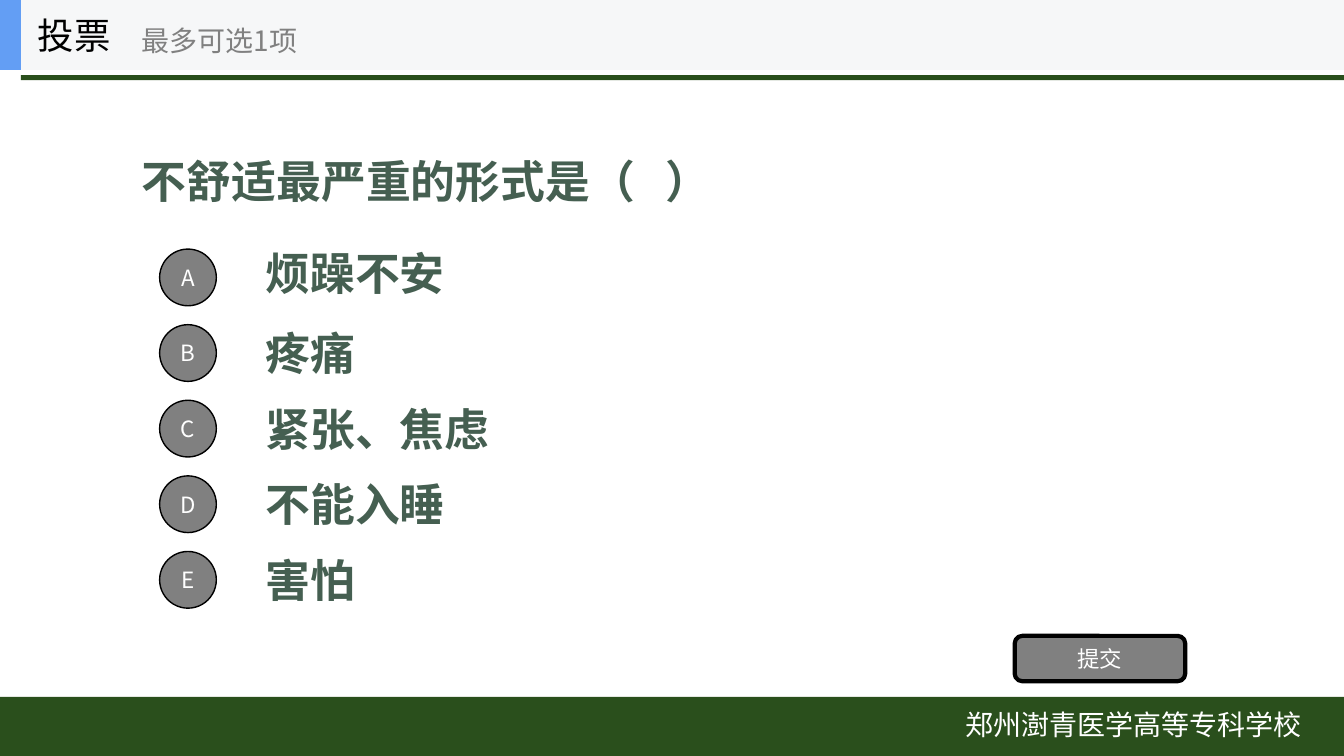
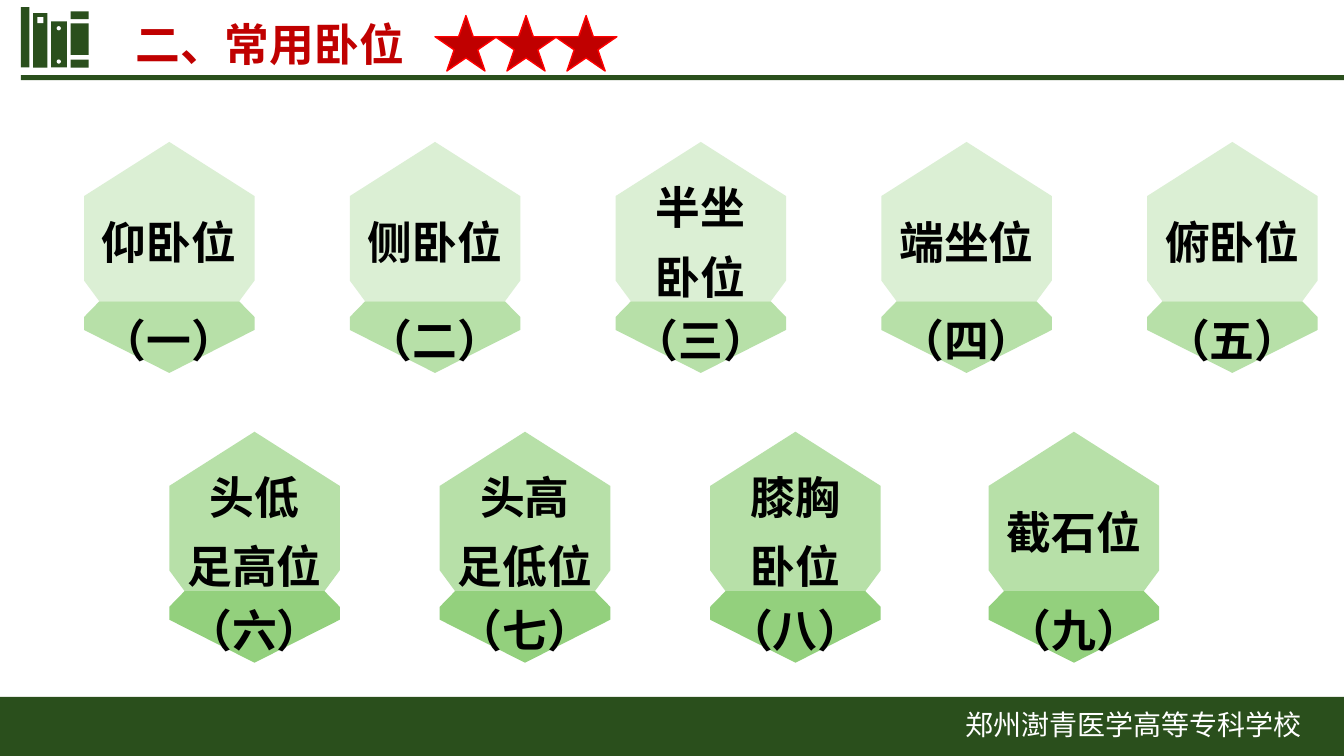
from dataclasses import dataclass

from lxml.etree import SubElement
from pptx import Presentation
from pptx.dml.color import RGBColor
from pptx.enum.shapes import MSO_SHAPE as Preset
from pptx.enum.text import MSO_ANCHOR as Anchor, MSO_AUTO_SIZE as AutoSize, PP_ALIGN as Align
from pptx.oxml.ns import qn
from pptx.util import Inches, Pt

CELL = Inches(1) / 12
COLUMNS, ROWS = 160, 90


@dataclass(frozen=True)
class Theme:
    """Colours, font and type sizes of the deck."""

    font: str = "Noto Sans CJK SC"
    white: str = "FFFFFF"
    black: str = "000000"
    grey: str = "808080"
    forest: str = "2A4F1C"
    slate: str = "455F51"
    red: str = "C00000"
    star_edge: str = "FF0000"
    band: str = "F6F7F8"
    tab: str = "639EF4"
    greens: tuple = ("DBEFD4", "B7E0A8", "93D07D")
    large: int = 32
    heading: int = 26
    medium: int = 20
    small: int = 16


@dataclass(frozen=True)
class Box:
    """An area measured in grid cells."""

    left: float
    top: float
    width: float
    height: float

    def inner(self, left, top, width, height):
        """Return a box placed from this box's corner."""
        return Box(self.left + left, self.top + top, width, height)

    def emu(self):
        """Return left, top, width and height as slide lengths."""
        return [round(n * CELL) for n in (self.left, self.top, self.width, self.height)]


THEME = Theme()
PAGE = Box(0, 0, COLUMNS, ROWS)
UPPER = ((0.5, 0), (1, 0.34), (1, 0.87), (0.91, 1), (0.09, 1), (0, 0.87), (0, 0.34))
LOWER = ((0.09, 0), (0.91, 0), (1, 0.22), (1, 0.4), (0.5, 1), (0, 0.4), (0, 0.22))

OPTIONS = ["烦躁不安", "疼痛", "紧张、焦虑", "不能入睡", "害怕"]
CARD_ROWS = [
    (16.9, THEME.greens[:2], [
        (10 + 31.64 * step, lines, number) for step, (lines, number) in enumerate([
            (["仰卧位"], "（一）"), (["侧卧位"], "（二）"), (["半坐", "卧位"], "（三）"),
            (["端坐位"], "（四）"), (["俯卧位"], "（五）")])]),
    (51.4, THEME.greens[1:], [
        (20.15, ["头低", "足高位"], "（六）"), (52.35, ["头高", "足低位"], "（七）"),
        (84.55, ["膝胸", "卧位"], "（八）"), (117.7, ["截石位"], "（九）")]),
]


def assign(target, values):
    """Set every attribute named in a dict."""
    for name, value in values.items():
        setattr(target, name, value)


def write(shape, lines, size, color, bold=False, para_format=None, frame_format=None):
    """Fill a shape with formatted paragraphs."""
    frame = shape.text_frame
    assign(frame, {"word_wrap": True, "auto_size": AutoSize.NONE,
                   "vertical_anchor": Anchor.MIDDLE, **(frame_format or {})})
    for index, line in enumerate(lines):
        para = frame.add_paragraph() if index else frame.paragraphs[0]
        assign(para, {"alignment": Align.LEFT, **(para_format or {})})
        span = para.add_run()
        span.text = line
        assign(span.font, {"name": THEME.font, "size": Pt(size), "bold": bold})
        span.font.color.rgb = RGBColor.from_string(color)
        SubElement(span.font._element, qn("a:ea"), typeface=THEME.font)


def paint(shape, fill, line=None, weight=1):
    """Give a shape a flat fill and an optional outline."""
    shape.shadow.inherit = False
    shape.fill.solid()
    shape.fill.fore_color.rgb = RGBColor.from_string(fill)
    if line:
        shape.line.color.rgb = RGBColor.from_string(line)
        shape.line.width = Pt(weight)
    else:
        shape.line.fill.background()
    return shape


def add_preset(page, box, fill, kind=Preset.RECTANGLE, line=None, weight=1):
    """Add a painted preset shape."""
    return paint(page.shapes.add_shape(kind, *box.emu()), fill, line, weight)


def add_label(page, box, text, size, color, **formats):
    """Add a text box with one line."""
    label = page.shapes.add_textbox(*box.emu())
    write(label, [text], size, color, **formats)


def add_outline(page, box, points, fill):
    """Add a polygon from points given as shares of its box."""
    left, top, width, height = box.emu()
    corners = [(left + x * width, top + y * height) for x, y in points]
    builder = page.shapes.build_freeform(*corners[0])
    builder.add_line_segments(corners[1:])
    return paint(builder.convert_to_shape(), fill)


def place(placeholder, box):
    """Move a placeholder into a box."""
    assign(placeholder, dict(zip(("left", "top", "width", "height"), box.emu())))
    return placeholder


def add_books(page, box):
    """Draw the row of books in the header."""
    for part in ((0, 0, 1, 7.2), (1.46, 0.72, 1.7, 6.5), (3.6, 1.7, 1.86, 5.5),
                 (5.9, 0.5, 2.15, 0.95), (5.9, 1.95, 2.15, 3.75), (5.9, 6.25, 2.15, 0.95)):
        add_preset(page, box.inner(*part), THEME.forest)
    add_preset(page, box.inner(1.94, 1.2, 0.72, 0.72), THEME.white)
    for top in (2.28, 6.24):
        add_preset(page, box.inner(4.25, top, 0.5, 0.5), THEME.white, Preset.OVAL)


def add_footer(page, box):
    """Draw the bottom band with the school name."""
    add_preset(page, box, THEME.forest)
    add_label(page, box.inner(112.2, 0.7, 45.5, 5.64), "郑州澍青医学高等专科学校",
              THEME.medium, THEME.white, para_format={"alignment": Align.CENTER},
              frame_format={"vertical_anchor": Anchor.TOP})


def furnish_master(deck, page):
    """Draw the shared parts and hand them to the slide master."""
    kept = len(page.shapes)
    add_preset(page, PAGE.inner(2.5, 8.95, 157.5, 0.6), THEME.forest)
    add_footer(page, PAGE.inner(0, 82.95, COLUMNS, 7.05))
    for number, shape in enumerate(list(page.shapes)[kept:], 100):
        shape.element.xpath(".//p:cNvPr")[0].set("id", str(number))
        deck.slide_master.shapes.element.append(shape.element)


def add_poll_header(page, box):
    """Draw the poll band with its heading and hint."""
    add_preset(page, box, THEME.band)
    add_preset(page, box.inner(0, 0, 2.5, box.height), THEME.tab)
    add_label(page, box.inner(3.3, 0, 25, box.height), "投票", THEME.heading, THEME.black)
    add_label(page, box.inner(15.7, 1.4, 30, 6.7), "最多可选1项", THEME.medium, THEME.grey)


def add_options(page, box, pitch=9):
    """Place the answer list and its lettered badges."""
    answers = place(page.placeholders[1], box.inner(11.4, -3.25, 112, 46))
    write(answers, OPTIONS, THEME.large, THEME.slate, bold=True, para_format={
        "line_spacing": Pt(pitch * 6), "space_before": Pt(0), "space_after": Pt(0)})
    for para in answers.text_frame.paragraphs:
        props = para._p.get_or_add_pPr()
        props.set("marL", "0")
        props.set("indent", "0")
        SubElement(props, qn("a:buNone"))
    answers.text_frame.paragraphs[1].space_before = Pt(3.6)
    for row, letter in enumerate("ABCDE"):
        badge = add_preset(page, box.inner(0, row * pitch, 6.75, 6.75), THEME.grey,
                           Preset.OVAL, THEME.black)
        write(badge, [letter], THEME.small, THEME.white,
              para_format={"alignment": Align.CENTER})


def build_poll(page):
    """Build the poll slide."""
    question = place(page.shapes.title, PAGE.inner(15.7, 11.6, 128, 19.7))
    write(question, ["不舒适最严重的形式是（   ）"], THEME.large, THEME.slate, bold=True)
    add_options(page, PAGE.inner(19, 29.65, 124, 43))
    button = add_preset(page, PAGE.inner(120.8, 75.7, 20.3, 5.4), THEME.grey,
                        Preset.ROUNDED_RECTANGLE, THEME.black, 3)
    write(button, ["提交"], THEME.small, THEME.white, para_format={"alignment": Align.CENTER})
    add_poll_header(page, PAGE.inner(0, 0, COLUMNS, 8.33))


def add_card(page, box, lines, number, fills):
    """Draw a two-part card with a name and a number."""
    split = box.height * 0.69
    halves = (
        (box.inner(0, 0, box.width, split), UPPER, lines, (0.28, 0.05)),
        (box.inner(0, split, box.width, box.height - split), LOWER, [number], (0.05, 0.16)),
    )
    for (area, points, words, (above, below)), fill in zip(halves, fills):
        write(add_outline(page, area, points, fill), words, THEME.large, THEME.black, bold=True,
              para_format={"alignment": Align.CENTER, "line_spacing": 1.3},
              frame_format={"margin_top": Inches(above), "margin_bottom": Inches(below)})


def build_positions(page):
    """Build the slide of lying positions."""
    add_books(page, PAGE.inner(2.5, 0.84, 8.1, 7.2))
    title = place(page.shapes.title, PAGE.inner(14.9, 1.4, 52.7, 7.6))
    write(title, ["二、常用卧位"], THEME.large, THEME.red, bold=True)
    for step in range(3):
        add_preset(page, PAGE.inner(51.8 + 7.15 * step, 1.85, 7.35, 6.6), THEME.red,
                   Preset.STAR_5_POINT, THEME.star_edge)
    for top, fills, cards in CARD_ROWS:
        for left, lines, number in cards:
            add_card(page, PAGE.inner(left, top, 20.3, 27.5), lines, number, fills)


def main():
    """Build and save the deck."""
    deck = Presentation()
    assign(deck, {"slide_width": round(COLUMNS * CELL), "slide_height": round(ROWS * CELL)})
    poll = deck.slides.add_slide(deck.slide_layouts[1])
    furnish_master(deck, poll)
    build_poll(poll)
    build_positions(deck.slides.add_slide(deck.slide_layouts[5]))
    deck.save("out.pptx")


if __name__ == "__main__":
    main()
